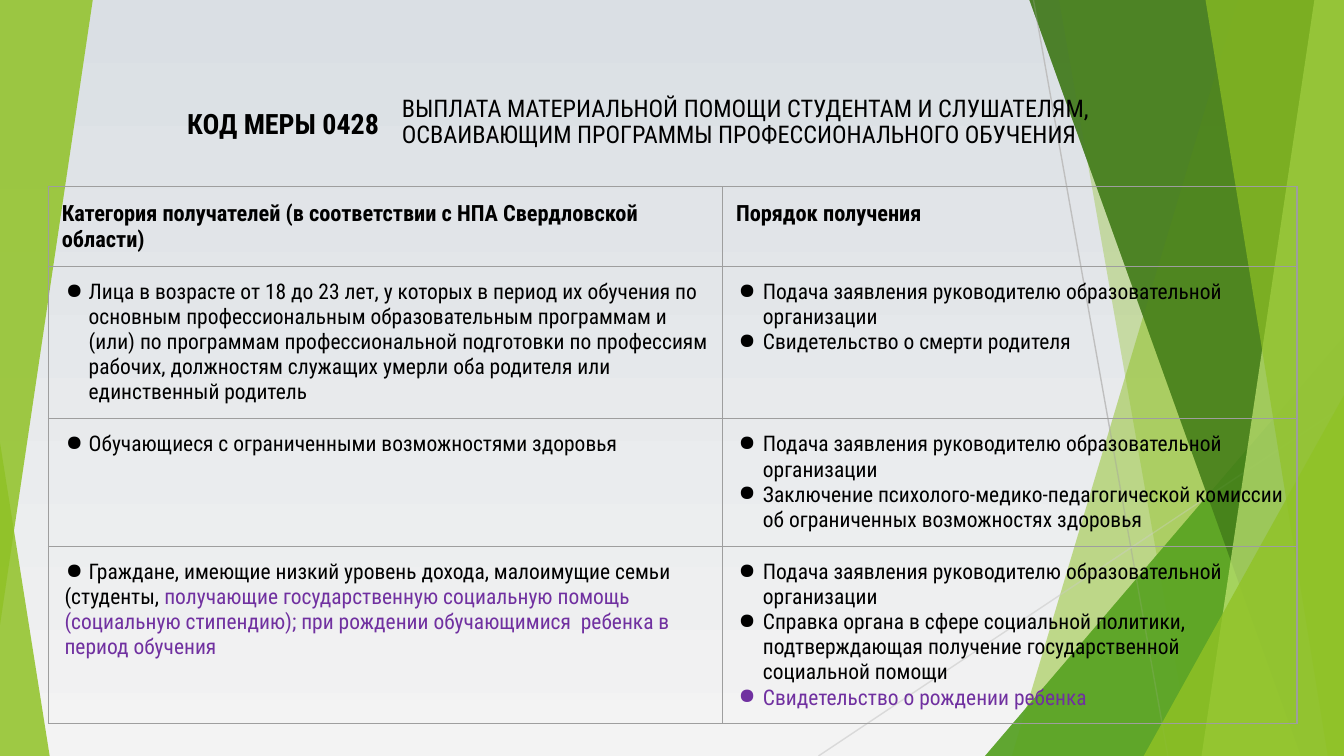
from collections import namedtuple

from lxml.etree import SubElement
from pptx import Presentation
from pptx.dml.color import RGBColor
from pptx.enum.shapes import MSO_CONNECTOR as Connector, MSO_SHAPE as Preset
from pptx.enum.text import MSO_ANCHOR as Anchor, MSO_AUTO_SIZE as AutoSize, PP_ALIGN as Align
from pptx.oxml import parse_xml
from pptx.oxml.ns import nsdecls, qn
from pptx.util import Inches, Pt

# The slide is a grid of 100 columns by 56.25 rows of square units.
UNIT = Inches(0.1)
COLUMNS, ROWS = 100, 56.25

FONT = "Roboto Condensed"
BLACK = RGBColor(0x00, 0x00, 0x00)
PURPLE = RGBColor(0x70, 0x30, 0xA0)
LIME = RGBColor(0x90, 0xC2, 0x26)
PALE_LIME = RGBColor(0xC0, 0xE4, 0x74)
GREEN = RGBColor(0x54, 0xA0, 0x21)
DARK_GREEN = RGBColor(0x3F, 0x78, 0x19)
BORDER_GRAY = RGBColor(0x9E, 0x9E, 0x9E)
RAY_GRAY = RGBColor(0xBF, 0xBF, 0xBF)
LIGHT_RAY = RGBColor(0xD9, 0xD9, 0xD9)
SKY = RGBColor(0xDA, 0xDF, 0xE4)
MIST = RGBColor(0xF3, 0xF3, 0xF3)

Box = namedtuple("Box", "left top width height")
Strip = namedtuple("Strip", "upper lower color opacity")
Corner = namedtuple("Corner", "left top color opacity")

FACETS = [
    Strip(92.1, 75.3, LIME, 30),
    Strip(78.8, 88.7, LIME, 20),
    Corner(73.3, 25, GREEN, 72),
    Strip(76.6, 96.8, DARK_GREEN, 70),
    Strip(97.8, 89.4, PALE_LIME, 70),
    Strip(89.7, 98.8, LIME, 65),
    Corner(85.1, 29.4, LIME, 80),
]

APPLICATION = "Подача заявления руководителю образовательной организации"
HEADINGS = ["Категория получателей (в соответствии с НПА Свердловской области)",
            "Порядок получения"]
# Each cell is a list of paragraphs; each paragraph is (bulleted, [(text, color), ...]).
MEASURES = [
    ([(True, [("Лица в возрасте от 18 до 23 лет, у которых в период их обучения по основным "
               "профессиональным образовательным программам и (или) по программам "
               "профессиональной подготовки по профессиям рабочих, должностям служащих "
               "умерли оба родителя или единственный родитель", BLACK)])],
     [(True, [(APPLICATION, BLACK)]),
      (True, [("Свидетельство о смерти родителя", BLACK)])]),
    ([(True, [("Обучающиеся с ограниченными возможностями здоровья", BLACK)])],
     [(True, [(APPLICATION, BLACK)]),
      (True, [("Заключение психолого-медико-педагогической комиссии об ограниченных "
               "возможностях здоровья", BLACK)])]),
    ([(True, [("Граждане, имеющие низкий уровень дохода, малоимущие семьи", BLACK)]),
      (False, [("(студенты, ", BLACK),
               ("получающие государственную социальную помощь (социальную стипендию); "
                "при рождении обучающимися  ребенка в период обучения", PURPLE)])],
     [(True, [(APPLICATION, BLACK)]),
      (True, [("Справка органа в сфере социальной политики, подтверждающая получение "
               "государственной социальной помощи", BLACK)]),
      (True, [("Свидетельство о рождении ребенка", PURPLE)])]),
]


def units(*counts):
    return [round(count * UNIT) for count in counts]


def write(para, text, size=11.5, color=BLACK, bold=False):
    span = para.add_run()
    span.text = text
    span.font.name, span.font.size, span.font.bold = FONT, Pt(size), bold
    span.font.color.rgb = color


def indent(para, left, hanging=0.0, bullet=None):
    props = para._p.get_or_add_pPr()
    props.set("marL", str(Inches(left)))
    props.set("indent", str(Inches(-hanging)))
    if bullet:
        SubElement(props, qn("a:buChar")).set("char", bullet)


def set_margins(area, side, end):
    area.margin_left = area.margin_right = Inches(side)
    area.margin_top = area.margin_bottom = Inches(end)


def paint(shape, color, opacity):
    shape.fill.solid()
    shape.fill.fore_color.rgb = color
    tint = shape.fill._xPr.find(qn("a:solidFill"))[0]
    SubElement(tint, qn("a:alpha")).set("val", str(opacity * 1000))
    shape.line.fill.background()
    shape.shadow.inherit = False


def add_triangle(group, box, apex, color, opacity, rotation=0):
    shape = group.shapes.add_shape(Preset.ISOSCELES_TRIANGLE, *units(*box))
    shape.adjustments[0] = apex
    shape.rotation = rotation
    paint(shape, color, opacity)


def add_ray(group, ends, color):
    ray = group.shapes.add_connector(Connector.STRAIGHT, *units(*ends))
    ray.line.color.rgb = color
    ray.line.width = Pt(0.75)
    SubElement(ray._element.spPr, qn("a:effectLst"))


def add_facets(group, box):
    """Layer the translucent strips and corners against the right edge of the box."""
    right, bottom = box.left + box.width, box.top + box.height
    for facet in FACETS:
        if isinstance(facet, Corner):
            area = Box(facet.left, facet.top, right - facet.left, bottom - facet.top)
            add_triangle(group, area, 1, facet.color, facet.opacity)
            continue
        outline = group.shapes.build_freeform(*units(facet.upper, box.top), scale=1.0)
        outline.add_line_segments([units(right, box.top), units(right, bottom),
                                   units(facet.lower, bottom)], close=True)
        paint(outline.convert_to_shape(), facet.color, facet.opacity)


def add_backdrop(page, box):
    fill = page.background.fill
    fill.gradient()
    fill.gradient_angle = 270
    for stop, color in zip(fill.gradient_stops, (SKY, MIST)):
        stop.color.rgb = color
    back = page.shapes.add_group_shape()
    add_facets(back, box)
    add_triangle(back, Box(box.left, 32.9, 3.7, box.height - 32.9), 0, LIME, 85)
    front = page.shapes.add_group_shape()
    add_ray(front, (76.9, box.top, 86.9, box.height), RAY_GRAY)
    add_ray(front, (box.width, 30.2, 60.9, box.height), LIGHT_RAY)
    add_facets(front, box)
    add_triangle(front, Box(box.left, box.top, 6.9, 46.5), 1, LIME, 85, rotation=180)


def add_heading(page, box):
    """Put the measure code on the left quarter and its name on the rest."""
    code_width = box.width / 4
    code = page.shapes.add_textbox(*units(box.left, box.top, code_width, box.height))
    title = page.shapes.title
    title.left, title.top, title.width, title.height = units(
        box.left + code_width, box.top, box.width - code_width, box.height)
    title._element.getparent().append(title._element)  # in front of the facets
    for shape, align, margins in ((code, Align.RIGHT, (0.1, 0.1)),
                                  (title, Align.LEFT, (0.07, 0.04))):
        frame = shape.text_frame
        frame.word_wrap = True
        frame.auto_size = AutoSize.NONE
        frame.vertical_anchor = Anchor.MIDDLE
        set_margins(frame, *margins)
        frame.paragraphs[0].alignment = align
    write(code.text_frame.paragraphs[0], "КОД МЕРЫ 0428", size=15, bold=True)
    name = title.text_frame.paragraphs[0]
    name.line_spacing = 0.9
    write(name, "ВЫПЛАТА МАТЕРИАЛЬНОЙ ПОМОЩИ СТУДЕНТАМ И СЛУШАТЕЛЯМ, "
                "ОСВАИВАЮЩИМ ПРОГРАММЫ ПРОФЕССИОНАЛЬНОГО ОБУЧЕНИЯ", size=13)


def format_cell(cell):
    set_margins(cell, 0.1, 0.1)
    cell.fill.background()
    props = cell._tc.get_or_add_tcPr()
    for place, side in enumerate("LRTB"):
        props.insert(place, parse_xml(
            f'<a:ln{side} {nsdecls("a")} w="{Pt(0.75)}"><a:solidFill>'
            f'<a:srgbClr val="{BORDER_GRAY}"/></a:solidFill></a:ln{side}>'))


def add_measures(page, box):
    frame = page.shapes.add_table(len(MEASURES) + 1, 2, *units(*box))
    table = frame.table
    table.first_row = table.horz_banding = False
    for column, share in zip(table.columns, (0.54, 0.46)):
        column.width = round(box.width * share * UNIT)
    for row, height in zip(table.rows, units(5.9, 11.3, 9.5, 13.2)):
        row.height = height
    for cell in table.iter_cells():
        format_cell(cell)
    for column, heading in enumerate(HEADINGS):
        write(table.cell(0, column).text_frame.paragraphs[0], heading, size=12, bold=True)
    for row, measure in enumerate(MEASURES, start=1):
        for column, items in enumerate(measure):
            text = table.cell(row, column).text_frame
            for number, (bulleted, spans) in enumerate(items):
                para = text.add_paragraph() if number else text.paragraphs[0]
                if bulleted:
                    indent(para, 0.2, hanging=(0.17, 0.18)[column], bullet="●")
                else:
                    indent(para, 0.02)
                for words, color in spans:
                    write(para, words, color=color)


def main():
    deck = Presentation()
    deck.slide_width, deck.slide_height = units(COLUMNS, ROWS)
    page = deck.slides.add_slide(deck.slide_layouts[5])
    add_backdrop(page, Box(0, 0, COLUMNS, ROWS))
    add_heading(page, Box(8.2, 5.3, 84, 7.7))
    add_measures(page, Box(3.6, 13.9, 92.9, 39.9))
    deck.save("out.pptx")


if __name__ == "__main__":
    main()
